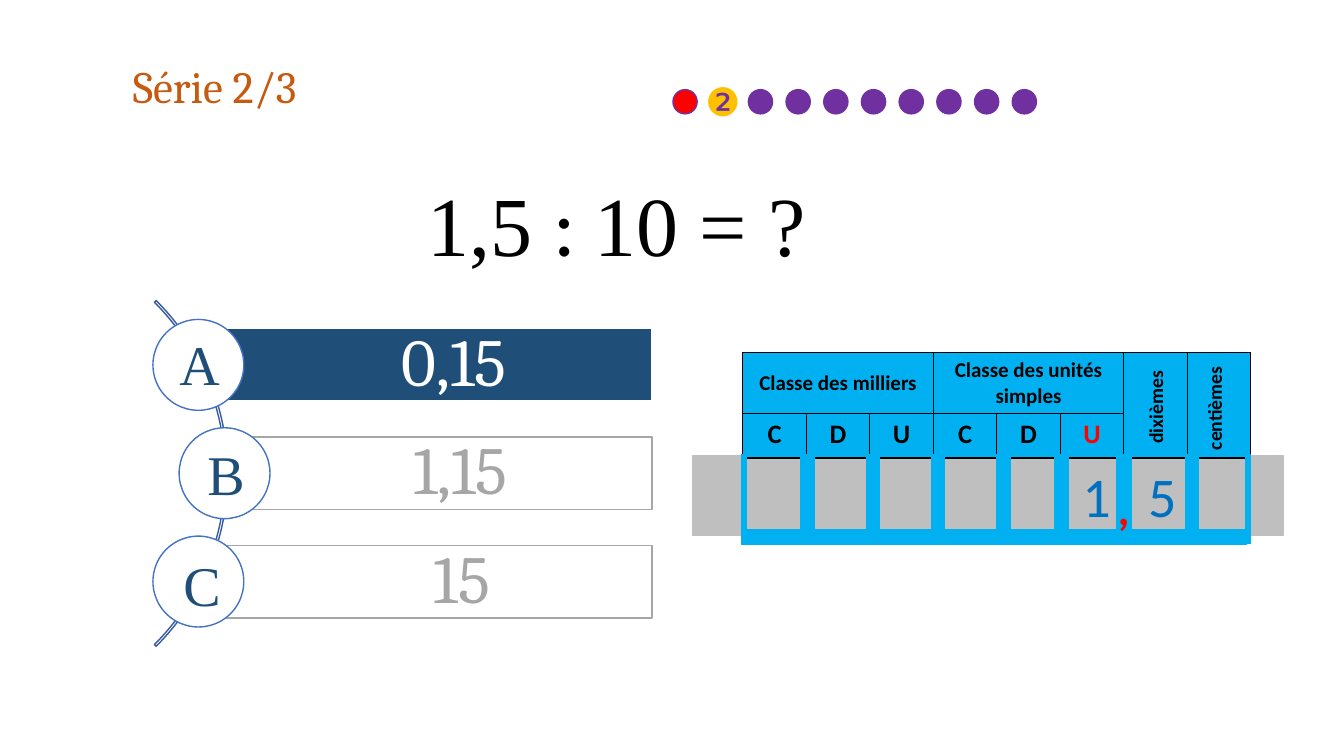
import pptx
import pptx.dml.color
import pptx.enum.shapes
import pptx.enum.text
import pptx.oxml.ns
import pptx.util
from lxml import etree

Cm = pptx.util.Cm
Pt = pptx.util.Pt
SHAPE = pptx.enum.shapes.MSO_SHAPE
ALIGN = pptx.enum.text.PP_ALIGN
ANCHOR = pptx.enum.text.MSO_ANCHOR

COLOURS = {
    "black": "000000", "white": "FFFFFF", "red": "FF0000", "orange": "C55A11",
    "purple": "7030A0", "gold": "FFC000", "grey": "BFBFBF", "muted": "A6A6A6",
    "cyan": "00B0F0", "blue": "0070C0", "navy": "1F4E79", "ring": "4472C4",
    "arc": "365B9D",
}


def rgb(name):
    return pptx.dml.color.RGBColor.from_string(COLOURS[name])


def write(paragraph, text, size, font, colour, bold=False):
    run = paragraph.add_run()
    run.text = text
    run.font.size = Pt(size)
    run.font.name = font
    run.font.bold = bold
    run.font.color.rgb = rgb(colour)
    return run


def add_text(slide, box, runs, wrap=True, align=ALIGN.LEFT, spacing=None, rotation=0):
    """Add a text box; each run is (text, size, font, colour[, bold])."""
    text_box = slide.shapes.add_textbox(*map(Cm, box))
    text_box.rotation = rotation
    text_box.text_frame.word_wrap = wrap
    paragraph = text_box.text_frame.paragraphs[0]
    paragraph.alignment = align
    paragraph.line_spacing = spacing
    for run in runs:
        write(paragraph, *run)
    return text_box


def add_figure(slide, kind, box, fill, line):
    figure = slide.shapes.add_shape(kind, *map(Cm, box))
    figure.shadow.inherit = False
    if fill:
        figure.fill.solid()
        figure.fill.fore_color.rgb = rgb(fill)
    else:
        figure.fill.background()
    figure.line.color.rgb = rgb(line)
    figure.line.width = Pt(1)
    return figure


def add_progress(slide):
    for step in range(10):
        add_figure(slide, SHAPE.OVAL, (16.96 + 0.95 * step, 2.26, 0.61, 0.61),
                   "purple" if step else "red", "purple")
    add_text(slide, (17.53, 1.83, 1.32, 1.45), [("❷", 28, "Arial", "gold")])


def add_number_bar(slide):
    bar = add_figure(slide, SHAPE.RECTANGLE, (17.45, 11.48, 14.88, 2.01), "grey", "grey")
    frame = bar.text_frame
    frame.vertical_anchor = ANCHOR.MIDDLE
    frame.margin_left = Cm(9.83)
    digits = frame.paragraphs[0]
    digits.alignment = ALIGN.LEFT
    write(digits, "1", 40, "Calibri", "blue")
    gap = write(digits, " ", 40, "Calibri", "blue")
    gap.font._element.set("spc", "1760")  # widens the gap to one table column
    write(digits, "5", 40, "Calibri", "blue")


def border_cell(cell):
    properties = cell._tc.get_or_add_tcPr()
    for index, side in enumerate(("lnL", "lnR", "lnT", "lnB")):
        line = etree.Element(pptx.oxml.ns.qn("a:" + side), w="12700")
        fill = etree.SubElement(line, pptx.oxml.ns.qn("a:solidFill"))
        etree.SubElement(fill, pptx.oxml.ns.qn("a:srgbClr"), val=COLOURS["black"])
        properties.insert(index, line)


def fill_cell(cell, text, size, colour="black"):
    cell.vertical_anchor = ANCHOR.MIDDLE if text == "Classe des milliers" else ANCHOR.TOP
    paragraph = cell.text_frame.paragraphs[0]
    paragraph.alignment = ALIGN.CENTER
    write(paragraph, text, size, "Calibri", colour, True)


def add_place_table(slide):
    table = slide.shapes.add_table(2, 8, Cm(18.72), Cm(8.89), Cm(12.8), Cm(2.62)).table
    for column in table.columns:
        column.width = Cm(1.6)
    for row, height in zip(table.rows, (1.5, 1.12)):
        row.height = Cm(height)
    for cell in table.iter_cells():
        cell.fill.solid()
        cell.fill.fore_color.rgb = rgb("cyan")
        cell.margin_left = cell.margin_right = Cm(0.25)
        cell.margin_top = cell.margin_bottom = Cm(0.13)
        border_cell(cell)
    for first, heading in ((0, "Classe des milliers"), (3, "Classe des unités simples")):
        table.cell(0, first).merge(table.cell(0, first + 2))
        fill_cell(table.cell(0, first), heading, 15)
    for column, letter in enumerate("CDUCDU"):
        fill_cell(table.cell(1, column), letter, 19, "red" if column == 5 else "black")
    for column in (6, 7):
        table.cell(0, column).merge(table.cell(1, column))

    # Upright headings of the decimal columns
    for heading, box in (("dixièmes", (27.79, 9.83, 2.67, 0.86)),
                         ("centièmes", (29.13, 9.86, 2.95, 0.86))):
        add_text(slide, box, [(heading, 14, "Calibri", "black", True)],
                 align=ALIGN.CENTER, rotation=270)


def add_window_frame(slide):
    top, height = 11.46, 2.24
    posts = [(18.69, 0.13, height), (28.14, 0.25, height), (28.37, 0.13, 2.13),
             (29.87, 0.33, 2.06), (31.39, 0.13, height)]
    posts += [(left, 0.33, height) for left in (20.19, 21.84, 23.47, 25.12, 26.59)]
    for left, width, post_height in posts:
        add_figure(slide, SHAPE.RECTANGLE, (left, top, width, post_height), "cyan", "cyan")
    add_figure(slide, SHAPE.RECTANGLE, (18.69, 13.34, 12.73, 0.38), "cyan", "cyan")
    comma = add_text(slide, (28.04, 11.99, 0.43, 1.78), [(",", 32, "Calibri", "red", True)])
    comma.text_frame.margin_left = Cm(0.13)
    comma.text_frame.margin_right = 0


def add_answer(slide, row, left, answer, inset, fill, line, ink):
    top, circle = 8.28 + 2.73 * row, 2.29
    bar = add_figure(slide, SHAPE.RECTANGLE, (left, top, 16.43 - left, 1.83), fill, line)
    frame = bar.text_frame
    frame.vertical_anchor = ANCHOR.MIDDLE
    frame.margin_left = Cm(inset)
    frame.margin_right = frame.margin_top = frame.margin_bottom = Cm(0.33)
    paragraph = frame.paragraphs[0]
    paragraph.alignment = ALIGN.CENTER
    paragraph.line_spacing = 0.9
    write(paragraph, answer, 48, "Cambria", ink)
    add_figure(slide, SHAPE.OVAL, (left - circle / 2, top - 0.23, circle, circle),
               "white", "ring")


def add_answers(slide):
    arc = add_figure(slide, SHAPE.BLOCK_ARC, (-6.58, 5.77, 12.32, 12.32), None, "arc")
    for index, value in enumerate((189, 27, 0.005)):
        arc.adjustments[index] = value
    add_answer(slide, 0, 5.0, "0,15", 1.8, "navy", "white", "white")
    add_answer(slide, 1, 5.66, "1,15", 1.45, None, "muted", "muted")
    add_answer(slide, 2, 5.0, "15", 2.18, None, "muted", "muted")
    for letter, left, top in (("A", 4.27, 8.18), ("B", 4.98, 10.95), ("C", 4.37, 13.74)):
        add_text(slide, (left, top, 1.07, 1.96), [(letter, 40, "Times New Roman", "navy")])


def main():
    deck = pptx.Presentation()
    deck.slide_width, deck.slide_height = Cm(33.87), Cm(19.05)
    slide = deck.slides.add_slide(deck.slide_layouts[6])

    # Title and question
    add_text(slide, (3.1, 1.5, 5.31, 1.37), [("Série 2/3", 32, "Cambria", "orange")],
             spacing=0.9)
    add_text(slide, (10.52, 4.22, 10.13, 2.82),
             [("1,5 ", 60, "Times New Roman", "black"), (": ", 60, "Calibri", "black"),
              ("10 = ?", 60, "Times New Roman", "black")], wrap=False)

    # Progress and place-value table
    add_progress(slide)
    add_number_bar(slide)
    add_place_table(slide)
    add_window_frame(slide)

    # Answer choices
    add_answers(slide)
    deck.save("out.pptx")


if __name__ == "__main__":
    main()
